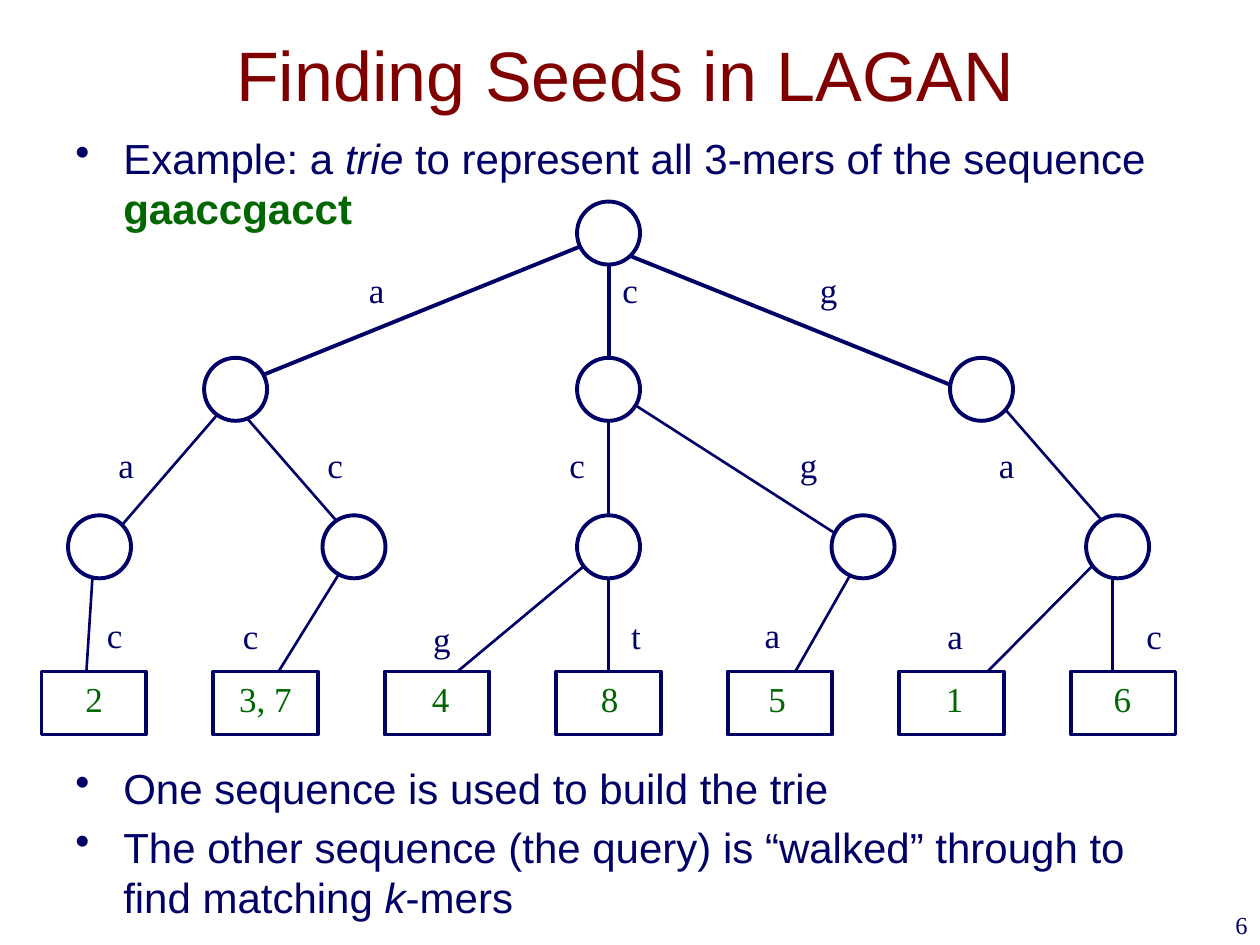
from lxml.etree import SubElement
from pptx import Presentation
from pptx.dml.color import RGBColor
from pptx.enum.shapes import MSO_CONNECTOR, MSO_SHAPE
from pptx.enum.text import MSO_ANCHOR, MSO_AUTO_SIZE, PP_ALIGN
from pptx.oxml.ns import qn
from pptx.util import Inches, Pt

NAVY, GREEN, MAROON, WHITE = "000066", "006600", "800000", "FFFFFF"
SANS, SERIF = "Arial", "Times New Roman"


def color(hex_string):
    return RGBColor.from_string(hex_string)


class TrieSlide:
    """Draws the elements of the slide in one style."""

    def __init__(self, slide):
        self.slide = slide

    def set_font(self, paragraph, name, size, hex_string):
        font = paragraph.font
        font.name, font.size = name, Pt(size)
        font.color.rgb = color(hex_string)

    def text_frame(self, left, top, width, height):
        box = self.slide.shapes.add_textbox(
            Inches(left), Inches(top), Inches(width), Inches(height))
        box.text_frame.word_wrap = True
        return box.text_frame

    def line_of_text(self, text, place, name, size, hex_string, align):
        frame = self.text_frame(*place)
        frame.vertical_anchor = MSO_ANCHOR.MIDDLE if size == 40 else MSO_ANCHOR.TOP
        paragraph = frame.paragraphs[0]
        paragraph.text = text
        paragraph.alignment = align
        self.set_font(paragraph, name, size, hex_string)

    def bullets(self, place, items):
        """Each item is a list of (text, style) pairs."""
        frame = self.text_frame(*place)
        for index, runs in enumerate(items):
            paragraph = frame.add_paragraph() if index else frame.paragraphs[0]
            paragraph.space_before = Pt(5)
            self.set_font(paragraph, SANS, 24, NAVY)
            properties = paragraph._p.get_or_add_pPr()
            properties.set("marL", str(Inches(0.38)))
            properties.set("indent", str(-Inches(0.38)))
            bullet = SubElement(properties, qn("a:buChar"))
            bullet.set("char", "•")
            # The bullet must come before the default run properties
            properties.find(qn("a:defRPr")).addprevious(bullet)
            for text, style in runs:
                run = paragraph.add_run()
                run.text = text
                if style == "italic":
                    run.font.italic = True
                elif style == "sequence":
                    run.font.bold = True
                    run.font.color.rgb = color(GREEN)

    def label(self, text, left, top, hex_string=NAVY):
        width = {"a": 0.32, "c": 0.32, "t": 0.28, "3, 7": 0.62}.get(text, 0.34)
        frame = self.text_frame(left, top, width, 0.43)
        frame.word_wrap = False
        frame.auto_size = MSO_AUTO_SIZE.SHAPE_TO_FIT_TEXT
        frame.text = text
        self.set_font(frame.paragraphs[0], SERIF, 20, hex_string)

    def edge(self, start, end, weight):
        connector = self.slide.shapes.add_connector(
            MSO_CONNECTOR.STRAIGHT, *(Inches(value) for value in start + end))
        connector.line.color.rgb = color(NAVY)
        connector.line.width = Pt(weight)
        SubElement(connector._element.spPr, qn("a:effectLst"))

    def outline(self, kind, left, top, width):
        shape = self.slide.shapes.add_shape(
            kind, Inches(left), Inches(top), Inches(width), Inches(0.5))
        shape.shadow.inherit = False
        shape.fill.solid()
        shape.fill.fore_color.rgb = color(WHITE)
        shape.line.color.rgb = color(NAVY)
        shape.line.width = Pt(2.25)

    def node(self, left, top):
        self.outline(MSO_SHAPE.OVAL, left, top, 0.5)

    def leaf(self, left, top):
        self.outline(MSO_SHAPE.RECTANGLE, left, top, 0.83)


def main():
    presentation = Presentation()
    presentation.slide_width, presentation.slide_height = Inches(10), Inches(7.5)
    slide = presentation.slides.add_slide(presentation.slide_layouts[6])
    slide.background.fill.solid()
    slide.background.fill.fore_color.rgb = color(WHITE)
    trie = TrieSlide(slide)

    # Title and example
    trie.line_of_text("Finding Seeds in LAGAN", (0.5, 0.17, 8.92, 0.83),
                      SANS, 40, MAROON, PP_ALIGN.CENTER)
    trie.bullets((0.5, 1, 8.92, 1.25), [[
        ("Example: a ", None), ("trie", "italic"),
        (" to represent all 3-mers of the sequence ", None),
        ("gaaccgacct", "sequence")]])

    # Edges, drawn first so that the nodes cover their ends
    root_edges = [
        ((4.83, 1.93), (4.83, 2.93)), ((4.67, 1.93), (1.83, 3.08)),
        ((4.75, 1.93), (7.83, 3.17))]
    lower_edges = [
        ((1.83, 3.17), (0.75, 4.42)), ((1.83, 3.17), (2.92, 4.42)),
        ((4.83, 3.17), (4.83, 4.42)), ((4.83, 3.08), (6.92, 4.42)),
        ((7.83, 3.08), (8.92, 4.33)),
        ((0.75, 4.33), (0.67, 5.58)), ((2.83, 4.33), (2, 5.67)),
        ((4.83, 4.33), (3.33, 5.58)), ((4.83, 4.33), (4.83, 5.58)),
        ((6.83, 4.42), (6.17, 5.58)), ((8.83, 4.33), (7.5, 5.67)),
        ((8.83, 4.33), (8.83, 5.58))]
    for edges, weight in ((root_edges, 2.25), (lower_edges, 1.5)):
        for start, end in edges:
            trie.edge(start, end, weight)

    # Nodes: each level is evenly spaced around the root
    center = 4.58
    for count, gap, top in ((1, 0, 1.6), (3, 2.96, 2.84), (5, 2.02, 4.09)):
        for index in range(count):
            trie.node(center + (index - count // 2) * gap, top)

    # Leaves with the positions of each 3-mer
    leaf_top, first_leaf, last_leaf = 5.33, 0.33, 8.5
    positions = [("2", 0.58), ("3, 7", 1.8), ("4", 3.33), ("8", 4.67),
                 ("5", 6), ("1", 7.41), ("6", 8.74)]
    leaf_gap = (last_leaf - first_leaf) / (len(positions) - 1)
    for index, (text, left) in enumerate(positions):
        trie.leaf(first_leaf + index * leaf_gap, leaf_top)
        trie.label(text, left, leaf_top, GREEN)

    # Edge letters, level by level
    letters = {
        2.08: [("a", 2.83), ("c", 4.84), ("g", 6.41)],
        3.47: [("a", 0.84), ("c", 2.5), ("c", 4.42), ("g", 6.25), ("a", 7.83)],
        4.82: [("c", 0.75), ("a", 5.97)],
        4.83: [("c", 1.83), ("t", 4.91), ("a", 7.42), ("c", 9)],
        4.85: [("g", 3.34)],
    }
    for top, row in letters.items():
        for letter, left in row:
            trie.label(letter, left, top)

    # Closing points and page number
    trie.bullets((0.5, 6, 8.92, 1.25), [
        [("One sequence is used to build the trie", None)],
        [("The other sequence (the query) is “walked” through to find matching ", None),
         ("k", "italic"), ("-mers", None)]])
    trie.line_of_text("6", (7.92, 7.17, 2.08, 0.33), SERIF, 14, NAVY, PP_ALIGN.RIGHT)

    presentation.save("out.pptx")


if __name__ == "__main__":
    main()
